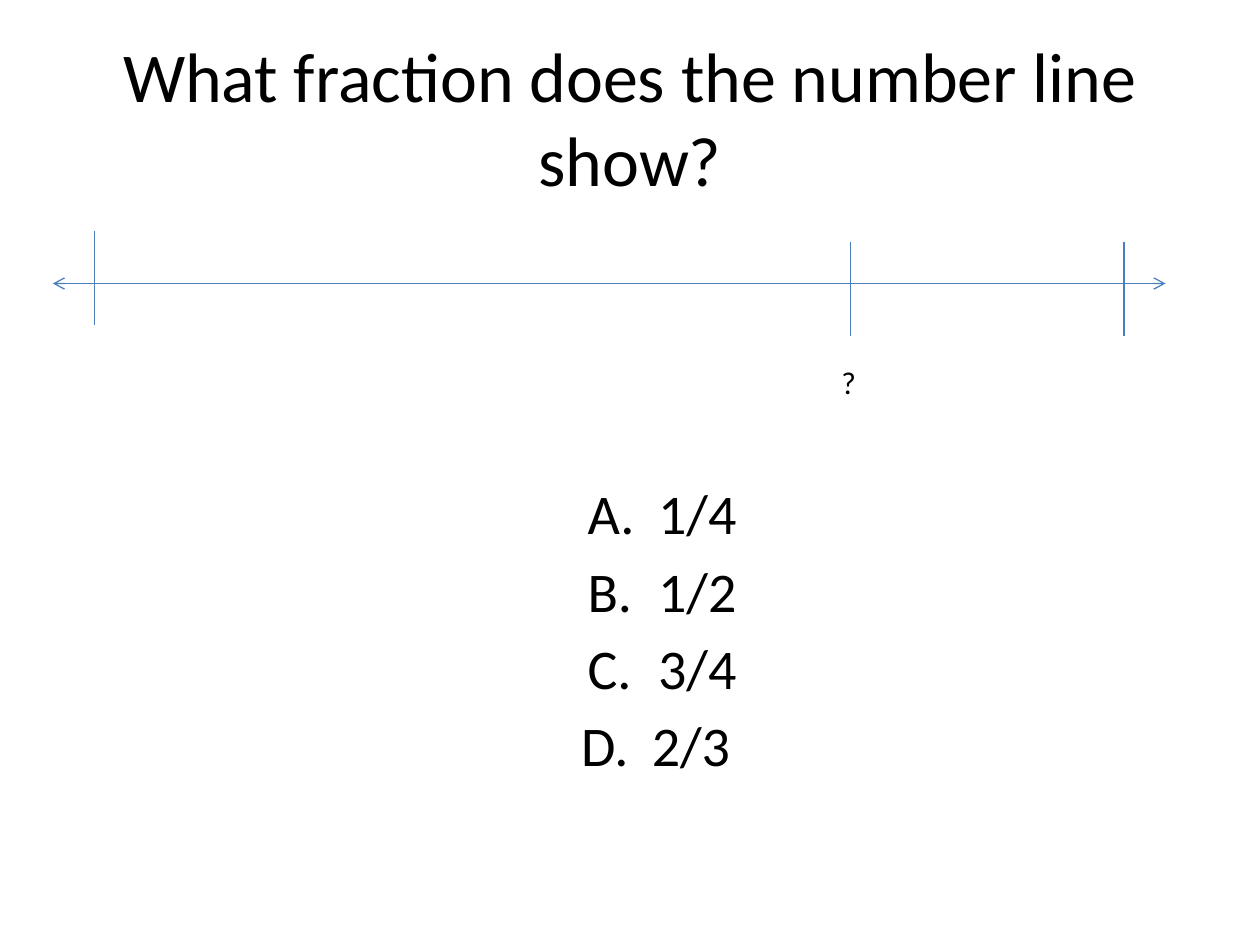
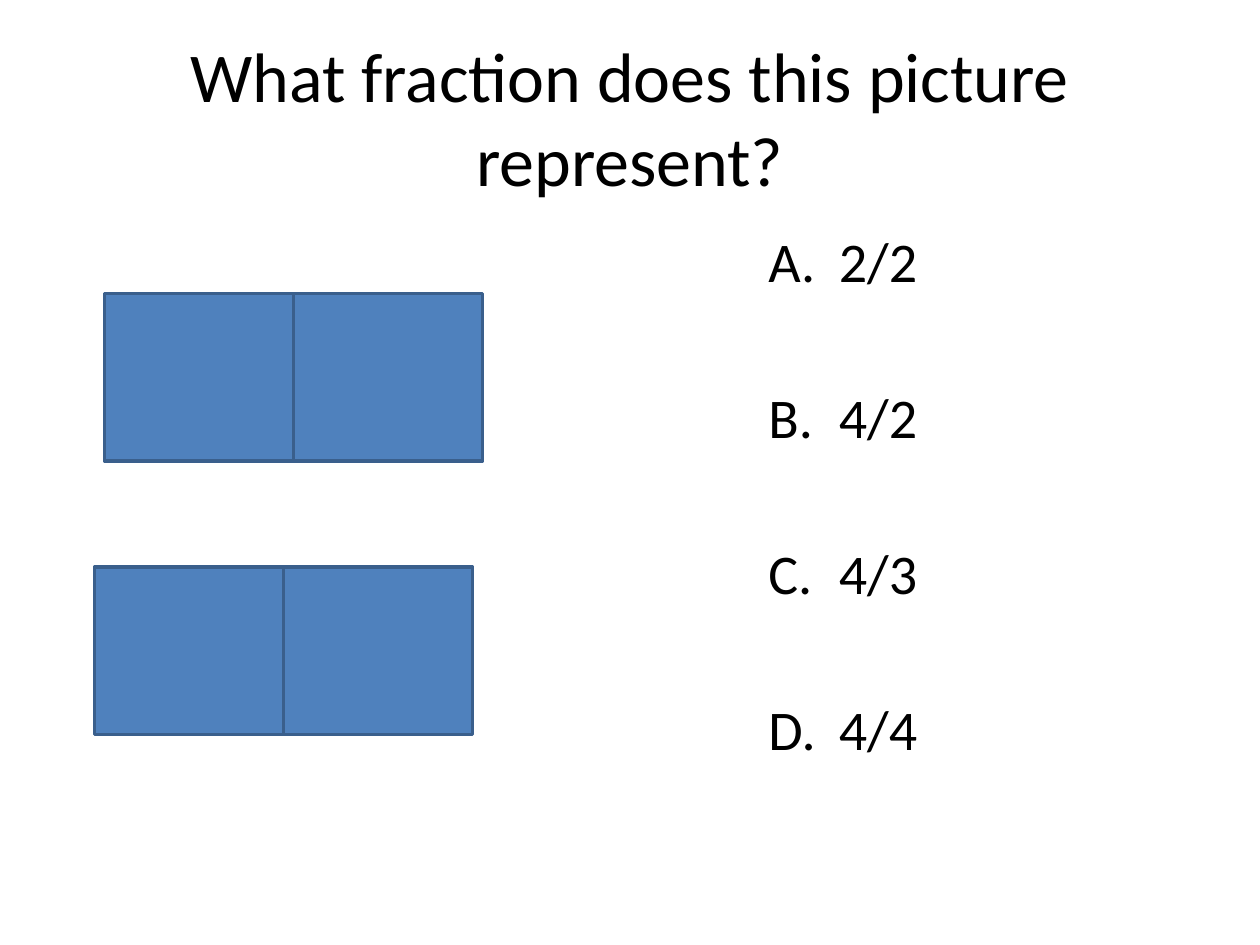
import dataclasses

import lxml.etree
import pptx
import pptx.dml.color
import pptx.enum.shapes
import pptx.enum.text
import pptx.oxml.ns
import pptx.util

Inches = pptx.util.Inches
Pt = pptx.util.Pt
ALIGN = pptx.enum.text.PP_ALIGN
ANCHOR = pptx.enum.text.MSO_ANCHOR


@dataclasses.dataclass(frozen=True)
class Theme:
    font: str = "Calibri"
    ink: str = "000000"
    axis: str = "4B7EBC"
    fill: str = "4F81BD"
    edge: str = "3A5F8C"
    title: float = 40
    body: float = 32
    label: float = 18
    thin: float = 0.75
    thick: float = 2


THEME = Theme()


def color(code):
    return pptx.dml.color.RGBColor.from_string(code)


def add_tag(parent, name, **attrs):
    return lxml.etree.SubElement(parent, pptx.oxml.ns.qn(name), attrs)


def number(par):
    """Give a paragraph a hanging A. B. C. number."""
    props = par._p.get_or_add_pPr()
    props.set("marL", str(Inches(0.56)))
    props.set("indent", str(Inches(-0.56)))
    add_tag(props, "a:buFont", typeface="+mj-lt")
    add_tag(props, "a:buAutoNum", type="alphaUcPeriod")


def write(frame, lines, size, align=ALIGN.LEFT, anchor=ANCHOR.TOP,
          wrap=True, gap=0, listed=False):
    """Fill a text frame, one paragraph a line, with gap points between."""
    frame.word_wrap = wrap
    frame.auto_size = pptx.enum.text.MSO_AUTO_SIZE.NONE
    frame.vertical_anchor = anchor
    for index, line in enumerate(lines):
        par = frame.add_paragraph() if index else frame.paragraphs[0]
        if listed:
            number(par)
        par.alignment = align
        par.space_before = Pt(gap if index else 0)
        run = par.add_run()
        run.text = line
        run.font.name = THEME.font
        run.font.size = Pt(size)
        run.font.color.rgb = color(THEME.ink)


def add_text(slide, left, top, width, height, lines, size, **style):
    box = slide.shapes.add_textbox(
        Inches(left), Inches(top), Inches(width), Inches(height))
    write(box.text_frame, lines, size, **style)


def add_slide(deck, title):
    slide = deck.slides.add_slide(deck.slide_layouts.get_by_name("Title Only"))
    head = slide.shapes.title
    head.left, head.top = Inches(0.5), Inches(0.3)
    head.width, head.height = Inches(9), Inches(1.25)
    write(head.text_frame, [title], THEME.title,
          align=ALIGN.CENTER, anchor=ANCHOR.MIDDLE)
    return slide


def add_line(slide, x1, y1, x2, y2, arrows=False):
    line = slide.shapes.add_connector(
        pptx.enum.shapes.MSO_CONNECTOR.STRAIGHT,
        Inches(x1), Inches(y1), Inches(x2), Inches(y2))
    line.line.color.rgb = color(THEME.axis)
    line.line.width = Pt(THEME.thin)
    if arrows:
        stroke = line.line._get_or_add_ln()
        for end in ("a:headEnd", "a:tailEnd"):
            add_tag(stroke, end, type="arrow")
    add_tag(line._element.spPr, "a:effectLst")


def add_bar(slide, left, top, parts=2, width=1.5, height=1.33):
    """Draw one whole as a row of equal shaded parts."""
    for index in range(parts):
        part = slide.shapes.add_shape(
            pptx.enum.shapes.MSO_SHAPE.RECTANGLE,
            Inches(left + index * width), Inches(top),
            Inches(width), Inches(height))
        part.shadow.inherit = False
        part.fill.solid()
        part.fill.fore_color.rgb = color(THEME.fill)
        part.line.color.rgb = color(THEME.edge)
        part.line.width = Pt(THEME.thick)


def line_slide(deck):
    slide = add_slide(deck, "What fraction does the number line show?")
    add_text(slide, 3.67, 3.75, 3.17, 3.2, ["1/4", "1/2", "3/4", "2/3 "],
             THEME.body, align=ALIGN.CENTER, gap=5.8, listed=True)
    add_line(slide, 0.42, 2.25, 9.25, 2.25, arrows=True)
    for x, top in ((0.75, 1.83), (8.92, 1.92), (6.75, 1.92)):
        add_line(slide, x, top, x, top + 0.75)
    add_text(slide, 6.58, 2.83, 0.32, 0.4, ["?"], THEME.label, wrap=False)


def bar_slide(deck):
    slide = add_slide(deck, "What fraction does this picture represent?")
    add_text(slide, 6, 1.75, 3.5, 4.95, ["2/2", "4/2", "4/3", "4/4"],
             THEME.body, gap=50.7, listed=True)
    add_bar(slide, 0.83, 2.33)
    add_bar(slide, 0.75, 4.5)


def main():
    deck = pptx.Presentation()
    deck.slide_width, deck.slide_height = Inches(10), Inches(7.5)
    line_slide(deck)
    bar_slide(deck)
    deck.save("out.pptx")


if __name__ == "__main__":
    main()
